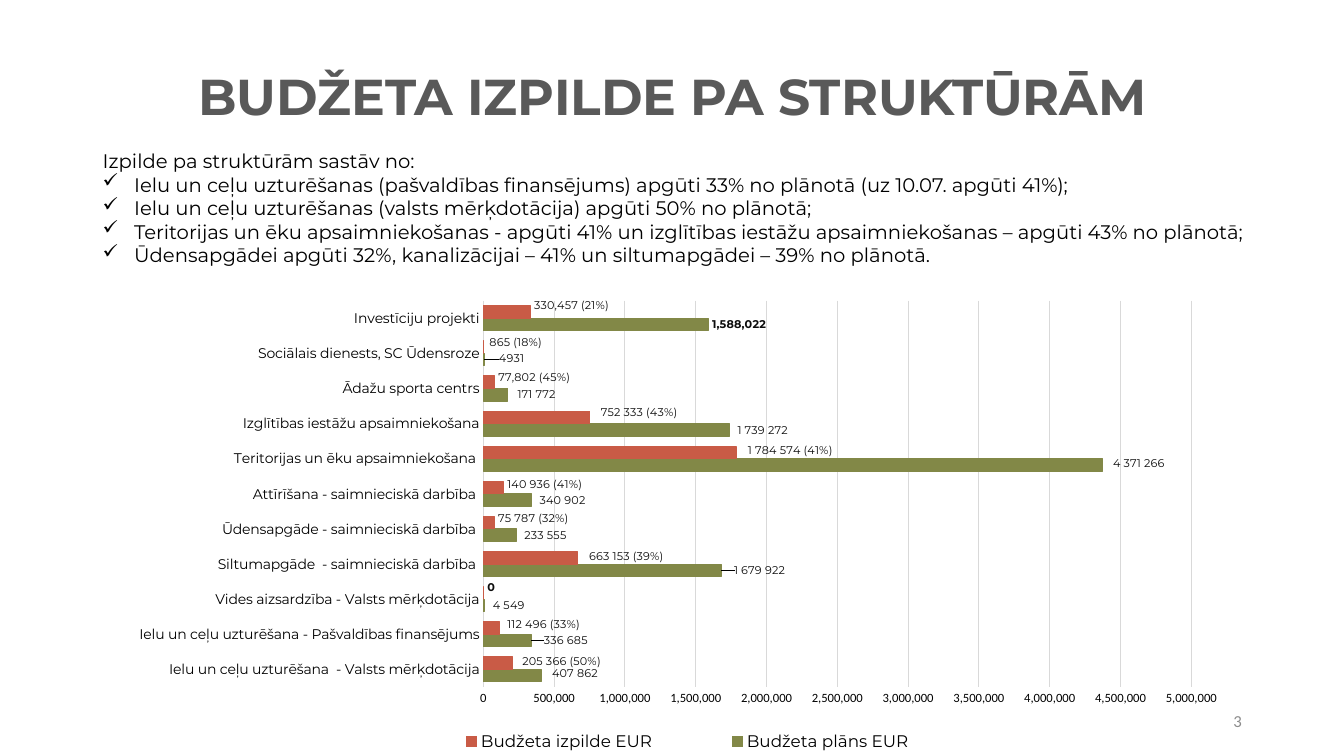
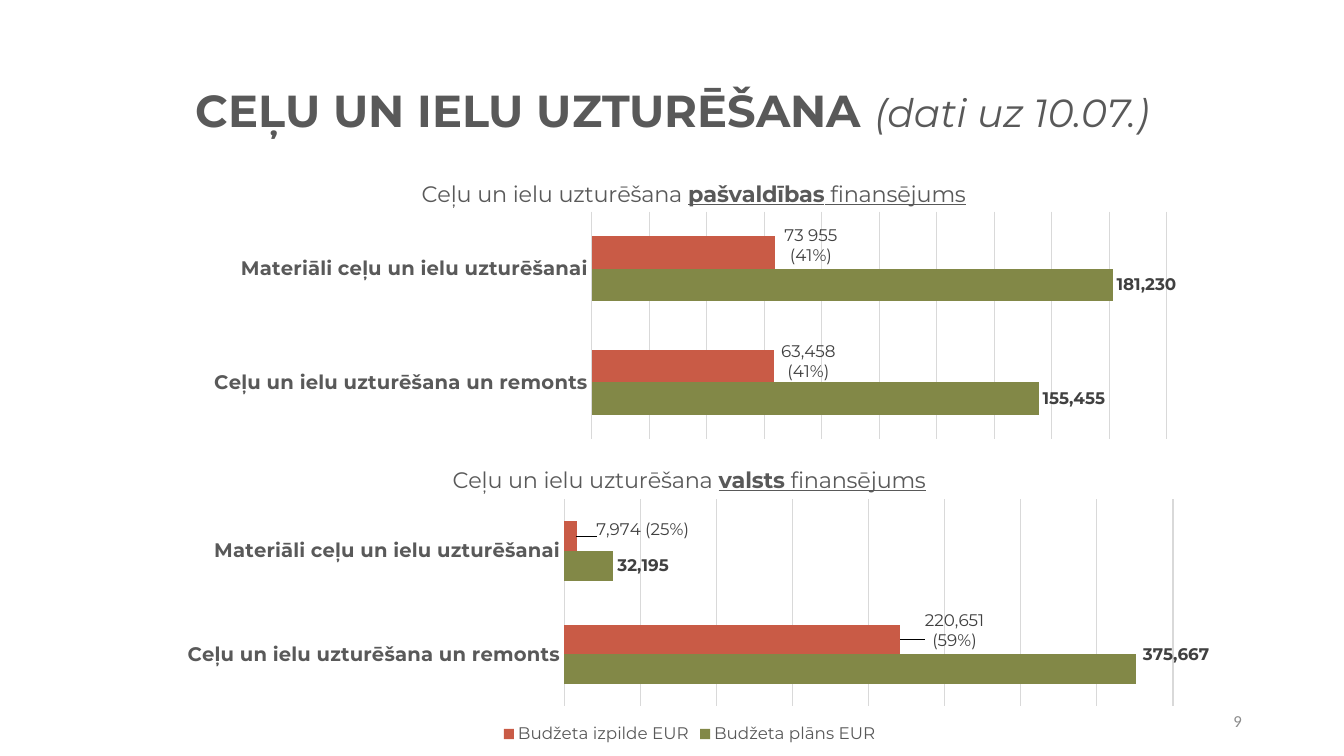
import lxml.etree
import pptx
import pptx.chart.data
import pptx.dml.color
import pptx.enum.chart
import pptx.enum.text
import pptx.oxml
import pptx.oxml.ns
import pptx.util

Cm = pptx.util.Cm
Pt = pptx.util.Pt
ALIGN = pptx.enum.text.PP_ALIGN
COLORS = {
    "background": "FFFFFF", "heading": "595959", "text": "000000", "page": "8C8C8C",
    "plan": "828847", "spent": "C95B46", "grid": "D9D9D9",
    "small_label": "0D0D0D", "large_label": "404040",
}
HEADING_FONT = "Montserrat"
NUMBER_FONT = "Calibri"
PLAN = "Budžeta plāns EUR"
SPENT = "Budžeta izpilde EUR"
AMOUNT = "#,##0"

STRUCTURES = [
    "Ielu un ceļu uzturēšana  - Valsts mērķdotācija",
    "Ielu un ceļu uzturēšana - Pašvaldības finansējums",
    "Vides aizsardzība - Valsts mērķdotācija",
    "Siltumapgāde  - saimnieciskā darbība ",
    "Ūdensapgāde - saimnieciskā darbība ",
    "Attīrīšana - saimnieciskā darbība ",
    "Teritorijas un ēku apsaimniekošana ",
    "Izglītības iestāžu apsaimniekošana",
    "Ādažu sporta centrs",
    "Sociālais dienests, SC Ūdensroze",
    "Investīciju projekti",
]
STRUCTURE_PLAN = [407862, 336685, 4549, 1679922, 233555, 340902,
                  4371266, 1739272, 171772, 4931, 1588022]
STRUCTURE_SPENT = [205366, 112496, 0, 663153, 75787, 140936,
                   1784574, 752333, 77802, 865, 330457]
STRUCTURE_PLAN_LABELS = {
    0: ("407 862", 1.75, -0.5), 1: ("336 685", 2.25, 0), 2: ("4 549", 1.25, 0),
    3: ("1 679 922", 2.25, 0), 4: ("233 555", 1, 0), 5: ("340 902", 1, 0),
    6: ("4 371 266", 1.75, -0.5), 7: ("1 739 272", 1, 0),
    8: ("171 772", 1.5, 0), 9: ("4931", 2.75, -0.25),
}
STRUCTURE_SPENT_LABELS = {
    0: ("205 366 (50%)", 1.5, -0.5), 1: ("112 496 (33%)", 1, -1), 2: (None, 0, -1.5),
    3: ("663 153 (39%)", 2, -0.5), 4: ("75 787 (32%)", 0, -1),
    5: ("140 936 (41%)", 0, -0.75), 6: ("1 784 574 (41%)", 2, -0.5),
    7: ("752 333 (43%)", 1.75, -1.25), 8: ("77,802 (45%)", 0, -1.25),
    9: ("865 (18%)", 0.5, -1.25), 10: ("330,457 (21%)", 0, -1.75),
}
ROAD_WORKS = ["Ceļu un ielu uzturēšana un remonts", "Materiāli ceļu un ielu uzturēšanai"]
SUMMARY = [
    "Izpilde pa struktūrām sastāv no: ",
    "Ielu un ceļu uzturēšanas (pašvaldības finansējums) apgūti 33% no plānotā (uz 10.07. apgūti 41%); ",
    "Ielu un ceļu uzturēšanas (valsts mērķdotācija) apgūti 50% no plānotā;",
    "Teritorijas un ēku apsaimniekošanas - apgūti 41% un izglītības iestāžu "
    "apsaimniekošanas – apgūti 43% no plānotā;",
    "Ūdensapgādei apgūti 32%, kanalizācijai – 41% un siltumapgādei – 39% no plānotā.",
]


def rgb(color):
    """Return the named palette colour."""
    return pptx.dml.color.RGBColor.from_string(COLORS[color])


def style_font(font, size, color="text", name=HEADING_FONT, bold=False, italic=False, underline=False):
    """Apply one complete text format to a font."""
    font.size, font.name = Pt(size), name
    font.bold, font.italic, font.underline = bold, italic, underline
    font.color.rgb = rgb(color)


def add_text(paragraph, text, **style):
    """Append a formatted run to a paragraph."""
    run = paragraph.add_run()
    run.text = text
    style_font(run.font, **style)


def add_frame(slide, box, anchor=pptx.enum.text.MSO_ANCHOR.MIDDLE):
    """Add a wrapping text area and return its text frame."""
    frame = slide.shapes.add_textbox(*map(Cm, box)).text_frame
    frame.word_wrap = True
    frame.vertical_anchor = anchor
    return frame


def add_heading(slide, box, title, size, remark="", remark_size=28):
    """Place the centred slide heading with an optional italic remark."""
    line = add_frame(slide, box).paragraphs[0]
    line.alignment, line.line_spacing = ALIGN.CENTER, 0.9
    add_text(line, title, size=size, color="heading", bold=True)
    if remark:
        add_text(line, remark, size=remark_size, color="heading", italic=True)


def add_page_number(slide, number):
    """Place the page number at the lower right."""
    line = add_frame(slide, (23.93, 17.65, 7.62, 1.02)).paragraphs[0]
    line.alignment = ALIGN.RIGHT
    add_text(line, number, size=12, color="page", name=NUMBER_FONT)


def add_summary(slide, box, lines):
    """Write an opening line followed by check-marked points."""
    frame = add_frame(slide, box, pptx.enum.text.MSO_ANCHOR.TOP)
    for index, text in enumerate(lines):
        line = frame.add_paragraph() if index else frame.paragraphs[0]
        line.alignment = ALIGN.JUSTIFY
        add_text(line, text, size=14)
        if index:
            properties = line._p.get_or_add_pPr()
            properties.set("marL", str(Cm(0.79)))
            properties.set("indent", str(-Cm(0.79)))
            mark = lxml.etree.SubElement(properties, pptx.oxml.ns.qn("a:buChar"))
            mark.set("char", "✓")


def set_layout(part, index, **values):
    """Give a chart part a manual layout at the child index."""
    for old in part.xpath("c:layout"):
        part.remove(old)
    fields = "".join(f'<c:{key} val="{value}"/>' for key, value in values.items())
    part.insert(index, pptx.oxml.parse_xml(
        f'<c:layout {pptx.oxml.ns.nsdecls("c")}><c:manualLayout>{fields}'
        "</c:manualLayout></c:layout>"))


def set_edges(part, index, area, **target):
    """Lay out a chart part by fractions of the chart area."""
    set_layout(part, index, **target, xMode="edge", yMode="edge", **dict(zip("xywh", area)))


def label_series(chart, order, box, points, style, plain_bold):
    """Label one series; each point gives text and a shift in millimetres."""
    series = chart.plots[0].series[order]
    outside = pptx.enum.chart.XL_LABEL_POSITION.OUTSIDE_END
    labels = series.data_labels
    labels.show_value, labels.position = True, outside
    labels.number_format, labels.number_format_is_linked = AMOUNT, False
    style_font(labels.font, bold=True, **style)
    for index, (text, right, down) in points.items():
        label = series.points[index].data_label
        if text:
            add_text(label.text_frame.paragraphs[0], text, bold=index in plain_bold, **style)
        else:
            style_font(label.font, bold=True, **style)
        label.position = outside
        node = chart.element.xpath(f'.//c:ser[{order + 1}]//c:dLbl[c:idx/@val="{index}"]')[0]
        set_layout(node, 1, x=round(right / 10 / box[2], 4), y=round(down / 10 / box[3], 4))


def add_budget_chart(slide, box, categories, plan, spent, plot_area, top, step, gap,
                     category_style, label_style, plan_labels, spent_labels, bold_points=(),
                     title=(), title_at=(), scale_shown=False, outline=False,
                     legend_color=None, legend_area=()):
    """Draw planned and spent budget as clustered horizontal bars."""
    data = pptx.chart.data.CategoryChartData(number_format=AMOUNT)
    data.categories = categories
    data.add_series(PLAN, plan)
    data.add_series(SPENT, spent)
    kind = pptx.enum.chart.XL_CHART_TYPE.BAR_CLUSTERED
    chart = slide.shapes.add_chart(kind, *map(Cm, box), data).chart
    style_font(chart.font, 10, name=NUMBER_FONT)
    bars = chart.plots[0]
    bars.gap_width, bars.overlap, bars.vary_by_categories = gap, 0, False
    for order, (color, points) in enumerate((("plan", plan_labels), ("spent", spent_labels))):
        look = bars.series[order].format
        look.fill.solid()
        look.fill.fore_color.rgb = rgb(color)
        if outline:
            look.line.color.rgb, look.line.width = rgb(color), Pt(0.75)
        label_series(chart, order, box, points, label_style, bold_points)

    amounts = chart.value_axis
    amounts.minimum_scale, amounts.maximum_scale, amounts.major_unit = 0, top, step
    amounts.has_major_gridlines = True
    grid = amounts.major_gridlines.format.line
    grid.color.rgb, grid.width = rgb("grid"), Pt(0.75)
    amounts.visible = scale_shown
    style_font(amounts.tick_labels.font, 9, name=NUMBER_FONT)
    amounts.tick_labels.number_format = AMOUNT
    amounts.tick_labels.number_format_is_linked = False
    style_font(chart.category_axis.tick_labels.font, **category_style)
    for axis in (amounts, chart.category_axis):
        axis.major_tick_mark = pptx.enum.chart.XL_TICK_MARK.NONE
        axis.format.line.fill.background()

    chart.has_title = bool(title)
    if title:
        line = chart.chart_title.text_frame.paragraphs[0]
        for text, style in title:
            add_text(line, text, size=16, color="heading", **style)
        set_edges(chart.element.xpath("c:chart/c:title")[0], 1, title_at)
    chart.has_legend = bool(legend_color)
    if legend_color:
        chart.legend.position = pptx.enum.chart.XL_LEGEND_POSITION.BOTTOM
        chart.legend.include_in_layout = False
        style_font(chart.legend.font, 12, legend_color)
        if legend_area:
            set_edges(chart.element.xpath(".//c:legend")[0], 1, legend_area)
    set_edges(chart.element.xpath(".//c:plotArea")[0], 0, plot_area, layoutTarget="inner")


def add_blank_slide(deck):
    """Add a blank slide with the shared background."""
    slide = deck.slides.add_slide(deck.slide_layouts[6])
    slide.background.fill.solid()
    slide.background.fill.fore_color.rgb = rgb("background")
    return slide


def build_structures(deck):
    """Build the slide on spending by structure."""
    slide = add_blank_slide(deck)
    add_heading(slide, (2.34, 0.66, 29.21, 3.68), "BUDŽETA IZPILDE PA STRUKTŪRĀM", 36)
    add_page_number(slide, "3")
    add_budget_chart(
        slide, (2.84, 6.91, 28.14, 12.14), STRUCTURES, STRUCTURE_PLAN, STRUCTURE_SPENT,
        (0.332, 0.055, 0.634, 0.802), 5000000, 500000, 80,
        {"size": 10}, {"size": 8, "color": "small_label"},
        STRUCTURE_PLAN_LABELS, STRUCTURE_SPENT_LABELS, bold_points=(6,) and (),
        scale_shown=True, outline=True, legend_color="text",
        legend_area=(0.25, 0.94, 0.53, 0.06))
    add_summary(slide, (2.34, 3.63, 29.79, 3.25), SUMMARY)


def build_roads(deck):
    """Build the slide on road upkeep by source of funding."""
    slide = add_blank_slide(deck)
    add_heading(slide, (2.34, 1.02, 29.21, 3.68), "CEĻU UN IELU UZTURĒŠANA ", 32, "(dati uz 10.07.)")
    add_page_number(slide, "9")
    fundings = [
        ("pašvaldības", (4.93, 4.01, 24.97, 7.21), [155455, 181230], [63458, 63571],
         (0.4, 0.184, 0.58, 0.796), 200000, 20000, (0.225, 0.06), {},
         {0: ("63,458 (41%)", 0.75, -1.25), 1: ("73 955 (41%)", 1.5, -1.75)}, None),
        ("valsts", (4.34, 11.23, 26.14, 7.62), [375667, 32195], [220651, 7974],
         (0.379, 0.177, 0.588, 0.685), 400000, 50000, (0.268, 0.055), {0: (None, 0.75, -3.75)},
         {0: ("220,651 (59%)", 5.25, -2.25), 1: ("7,974 (25%)", 4, -1.5)}, "heading"),
    ]
    for source, box, plan, spent, area, top, step, title_at, plan_labels, spent_labels, legend in fundings:
        title = [("Ceļu un ielu uzturēšana ", {}), (source, {"bold": True, "underline": True}),
                 (" finansējums", {"underline": True})]
        add_budget_chart(
            slide, box, ROAD_WORKS, plan, spent, area, top, step, 150,
            {"size": 14, "color": "heading", "bold": True},
            {"size": 12, "color": "large_label"}, plan_labels, spent_labels,
            title=title, title_at=title_at, legend_color=legend)


def main():
    """Build and save the presentation."""
    deck = pptx.Presentation()
    deck.slide_width, deck.slide_height = Cm(33.87), Cm(19.05)
    build_structures(deck)
    build_roads(deck)
    deck.save("out.pptx")


if __name__ == "__main__":
    main()
